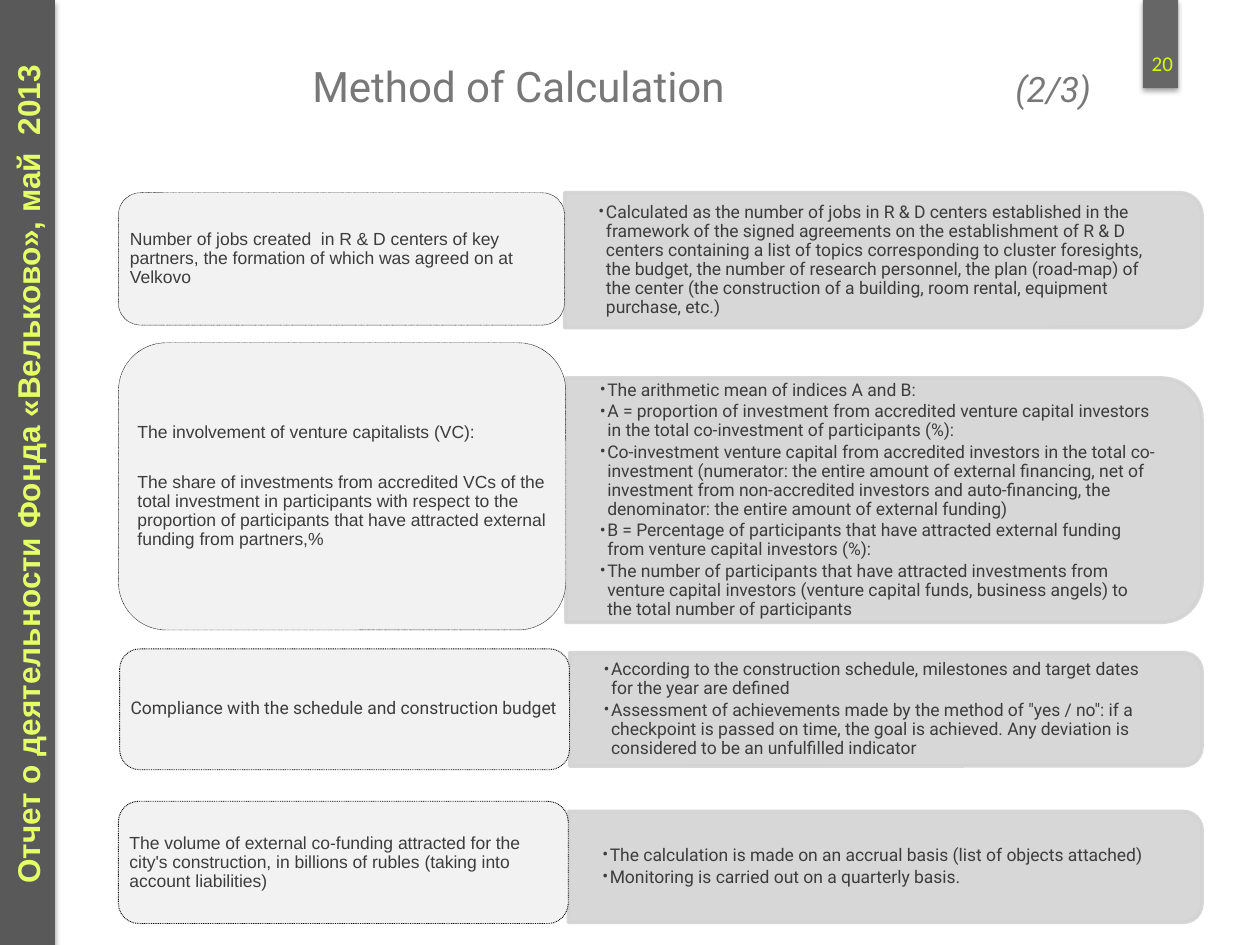
from dataclasses import dataclass

import lxml.etree
import pptx
import pptx.dml.color
import pptx.enum.dml
import pptx.enum.shapes
import pptx.enum.text
import pptx.oxml.ns
import pptx.util

Inches, Pt, qn = pptx.util.Inches, pptx.util.Pt, pptx.oxml.ns.qn
SHAPE = pptx.enum.shapes.MSO_SHAPE
ANCHOR = pptx.enum.text.MSO_ANCHOR

COLORS = {
    "tab": "666666", "side": "595959", "number": "D4FF01", "side_text": "E5FF67",
    "title": "787878", "bar": "D3D3D3", "card": "F2F2F2", "border": "000000",
    "body": "3C3C3C",
}
BAR_RIGHT = 9.54
CORNER_INSET = 0.0488  # text inset of a default rounded corner, per unit of height


@dataclass
class Row:
    left: float
    top: float
    width: float
    height: float
    bar_top: float
    bar_height: float
    label: list[str]
    details: list[str]
    border: float
    font: str = "Arial"


ROWS = [
    Row(0.94, 1.53, 3.54, 1.05, 1.53, 1.07,
        ["Number of jobs created  in R & D centers of key partners, the formation of "
         "which was agreed on at Velkovo"],
        ["Calculated as the number of jobs in R & D centers established in the framework "
         "of the signed agreements on the establishment of R & D centers containing a list "
         "of topics corresponding to cluster foresights, the budget, the number of research "
         "personnel, the plan (road-map) of the center (the construction of a building, room "
         "rental, equipment purchase, etc.)"], 0.25),
    Row(0.94, 2.72, 3.55, 2.28, 3.0, 1.94,
        ["The involvement of venture capitalists (VC):",
         "The share of investments from accredited VCs of the total investment in "
         "participants with respect to the proportion of participants that have attracted "
         "external funding from partners,%"],
        ["The arithmetic mean of indices A and B:",
         "A = proportion of investment from accredited venture capital investors in the "
         "total co-investment of participants (%):",
         "Co-investment venture capital from accredited investors in the total "
         "co-investment (numerator: the entire amount of external financing, net of "
         "investment from non-accredited investors and auto-financing, the denominator: "
         "the entire amount of external funding)",
         "B = Percentage of participants that have attracted external funding from venture "
         "capital investors (%):",
         "The number of participants that have attracted investments from venture capital "
         "investors (venture capital funds, business angels) to the total number of "
         "participants"], 0.25),
    Row(0.95, 5.15, 3.57, 0.96, 5.18, 0.9,
        ["Compliance with the schedule and construction budget"],
        ["According to the construction schedule, milestones and target dates for the year "
         "are defined",
         "Assessment of achievements made by the method of \"yes / no\": if a checkpoint is "
         "passed on time, the goal is achieved. Any deviation is considered to be an "
         "unfulfilled indicator"], 0.5, "Roboto"),
    Row(0.94, 6.36, 3.57, 0.97, 6.44, 0.88,
        ["The volume of external co-funding attracted for the city's construction, in "
         "billions of rubles (taking into account liabilities)"],
        ["The calculation is made on an accrual basis (list of objects attached)",
         "Monitoring is carried out on a quarterly basis."], 0.5),
]


def rgb(name: str) -> pptx.dml.color.RGBColor:
    return pptx.dml.color.RGBColor.from_string(COLORS[name])


def add_block(slide, kind, box: tuple, fill: str, line: str = "", weight: float = 0.75):
    sp = slide.shapes.add_shape(kind, *map(Inches, box))
    sp.shadow.inherit = False
    sp.fill.solid()
    sp.fill.fore_color.rgb = rgb(fill)
    if line:
        sp.line.color.rgb = rgb(line)
        sp.line.width = Pt(weight)
    else:
        sp.line.fill.background()
    return sp


def add_shadow(sp) -> None:
    effects = sp._element.spPr.find(qn("a:effectLst"))
    shadow = lxml.etree.SubElement(effects, qn("a:outerShdw"), blurRad=str(Pt(3.1)),
                                   dist=str(Pt(1.8)), dir="5400000", rotWithShape="0")
    color = lxml.etree.SubElement(shadow, qn("a:srgbClr"), val="000000")
    lxml.etree.SubElement(color, qn("a:alpha"), val="35000")


def add_text(slide, box: tuple, lines: list[str], font: str, size: float, color: str,
             insets: tuple = (0.1, 0.05), anchor=ANCHOR.TOP, spacing: float = 1,
             gap: float = 0, bullets: bool = False):
    sp = slide.shapes.add_textbox(*map(Inches, box))
    tf = sp.text_frame
    tf.word_wrap = True
    tf.vertical_anchor = anchor
    tf.margin_left = tf.margin_right = Inches(insets[0])
    tf.margin_top = tf.margin_bottom = Inches(insets[1])
    for i, text in enumerate(lines):
        p = tf.paragraphs[0] if i == 0 else tf.add_paragraph()
        p.text = text
        p.line_spacing = spacing
        if i:
            p.space_before = Pt(gap)
        if bullets:
            pPr = p._p.get_or_add_pPr()
            pPr.set("marL", str(Inches(0.06)))
            pPr.set("indent", str(Inches(-0.06)))
            lxml.etree.SubElement(pPr, qn("a:buFont"), typeface=font)
            lxml.etree.SubElement(pPr, qn("a:buChar"), char="•")
        for r in p.runs:
            r.font.name = font
            r.font.size = Pt(size)
            r.font.color.rgb = rgb(color)
    return sp


def add_bar(slide, box: tuple) -> None:
    """Bar with its right corners rounded: a top-rounded rectangle turned by 90 degrees."""
    left, top, width, height = box
    shift = (width - height) / 2
    sp = add_block(slide, SHAPE.ROUND_2_SAME_RECTANGLE,
                   (left + shift, top - shift, height, width), "bar", "bar", 2)
    sp.rotation = 90
    for color in sp._element.spPr.iter(qn("a:srgbClr")):
        lxml.etree.SubElement(color, qn("a:alpha"), val="90000")


def add_row(slide, row: Row) -> None:
    # Details on the right
    left = row.left + row.width
    width = BAR_RIGHT - left
    inset = CORNER_INSET * row.bar_height
    add_bar(slide, (left, row.bar_top, width, row.bar_height))
    add_text(slide, (left, row.bar_top + inset, width - inset, row.bar_height - 2 * inset),
             row.details, "Roboto", 10, "body", (0.27, 0.14), ANCHOR.MIDDLE, 0.9, 1.5, True)

    # Label card on the left
    inset = CORNER_INSET * row.height
    card = add_block(slide, SHAPE.ROUNDED_RECTANGLE,
                     (row.left, row.top, row.width, row.height), "card", "border", row.border)
    card.line.dash_style = pptx.enum.dml.MSO_LINE.ROUND_DOT
    add_text(slide, (row.left + inset, row.top + inset,
                     row.width - 2 * inset, row.height - 2 * inset),
             row.label, row.font, 10, "body", (0.04, 0.02), ANCHOR.MIDDLE, 0.9, 18)


def main() -> None:
    prs = pptx.Presentation()
    prs.slide_width, prs.slide_height = Inches(10), Inches(7.5)
    slide = prs.slides.add_slide(prs.slide_layouts[6])

    # Page number tab
    add_shadow(add_block(slide, SHAPE.RECTANGLE, (9.07, 0, 0.28, 0.7), "tab"))
    number = add_text(slide, (9.01, 0.3, 0.43, 0.4), ["20"], "Calibri", 12, "number",
                      anchor=ANCHOR.MIDDLE)
    number.text_frame.paragraphs[0].alignment = pptx.enum.text.PP_ALIGN.CENTER

    # Side band with the report name, on one line
    add_shadow(add_block(slide, SHAPE.RECTANGLE, (0, 0, 0.43, 7.5), "side", "side"))
    report = add_text(slide, (-3.15, 3.54, 6.74, 0.4),
                      ["Отчет о деятельности Фонда «Вельково», май  2013"],
                      "Arial", 18, "side_text")
    report.rotation = 270
    report.text_frame.word_wrap = False
    report.text_frame.auto_size = pptx.enum.text.MSO_AUTO_SIZE.SHAPE_TO_FIT_TEXT
    report.text_frame.paragraphs[0].runs[0].font.bold = True

    # Title, with the part number at a tab stop
    title = add_text(slide, (2.38, 0.43, 6.39, 0.87), ["Method of Calculation\t"],
                     "Roboto", 24, "title")
    p = title.text_frame.paragraphs[0]
    tabs = lxml.etree.SubElement(p._p.get_or_add_pPr(), qn("a:tabLst"))
    lxml.etree.SubElement(tabs, qn("a:tab"), pos=str(Inches(5.58)), algn="l")
    r = p.add_run()
    r.text = "(2/3)"
    r.font.name, r.font.size, r.font.italic = "Roboto", Pt(20), True
    r.font.color.rgb = rgb("title")

    # Indicators
    for row in ROWS:
        add_row(slide, row)

    prs.save("out.pptx")


if __name__ == "__main__":
    main()
